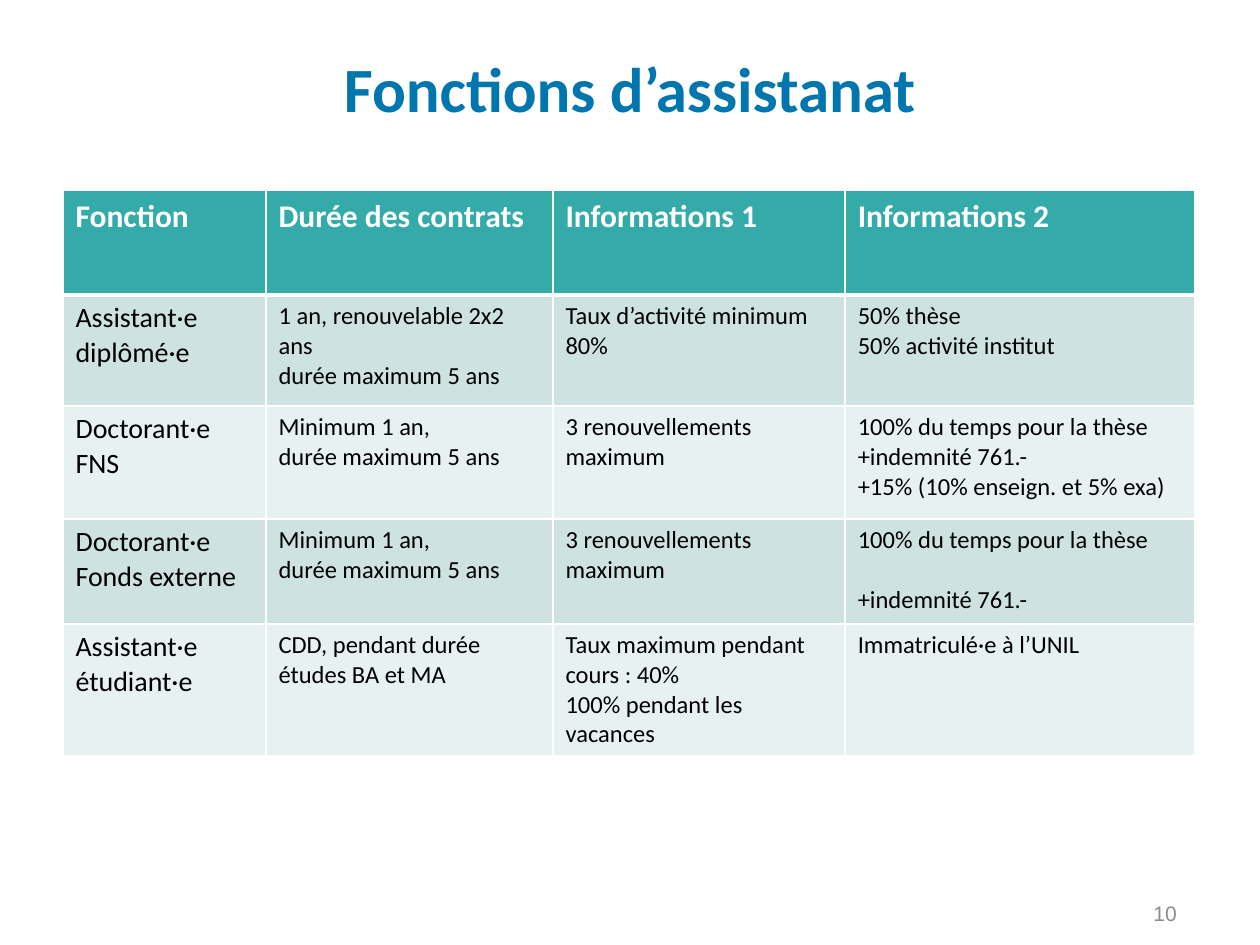
from dataclasses import dataclass

from lxml import etree
from pptx import Presentation
from pptx.dml.color import RGBColor
from pptx.enum import text
from pptx.oxml import ns
from pptx.util import Pt


@dataclass(frozen=True)
class Theme:
    font: str = "Calibri"
    number_font: str = "Arial"
    title: str = "0076AF"
    header: str = "34AAA9"
    bands: tuple = ("CEE2E2", "E8F1F1")
    light: str = "FFFFFF"
    dark: str = "000000"
    muted: str = "8C8C8C"
    title_size: int = 36
    header_size: int = 18
    function_size: int = 16
    detail_size: int = 14
    number_size: int = 12
    blank_line: int = 17


THEME = Theme()
COLUMN_WIDTHS = (116, 164, 167, 200)
ROW_HEIGHTS = (59.5, 63.5, 64.5, 60, 74.5)
HEADINGS = ("Fonction", "Durée des contrats", "Informations 1", "Informations 2")
CONTRACTS = (
    ("Assistant·e diplômé·e",
     "1 an, renouvelable 2x2 ans\ndurée maximum 5 ans",
     "Taux d’activité minimum 80%",
     "50% thèse\n50% activité institut"),
    ("Doctorant·e\nFNS",
     "Minimum 1 an,\ndurée maximum 5 ans",
     "3 renouvellements maximum",
     "100% du temps pour la thèse\n+indemnité 761.-\n+15% (10% enseign. et 5% exa)"),
    ("Doctorant·e\nFonds externe",
     "Minimum 1 an,\ndurée maximum 5 ans",
     "3 renouvellements maximum",
     "100% du temps pour la thèse\n+indemnité 761.-"),
    ("Assistant·e étudiant·e",
     "CDD, pendant durée études BA et MA",
     "Taux maximum pendant cours : 40%\n100% pendant les vacances",
     "Immatriculé·e à l’UNIL"),
)


def place(element, left, top, width, height):
    element.left, element.top = Pt(left), Pt(top)
    element.width, element.height = Pt(width), Pt(height)


def format_text(frame, size, color, bold=False, font=THEME.font, align=None):
    for paragraph in frame.paragraphs:
        paragraph.alignment = align
        for run in paragraph.runs:
            run.font.name = font
            run.font.size = Pt(size)
            run.font.bold = bold
            run.font.color.rgb = RGBColor.from_string(color)


def set_borders(cell, top, bottom):
    """Draw light cell borders; must run before the cell fill is set."""
    properties = cell._tc.get_or_add_tcPr()
    for side, width in (("L", 1), ("R", 1), ("T", top), ("B", bottom)):
        line = etree.SubElement(properties, ns.qn(f"a:ln{side}"), w=str(Pt(width)))
        fill = etree.SubElement(line, ns.qn("a:solidFill"))
        etree.SubElement(fill, ns.qn("a:srgbClr"), val=THEME.light)


def fill_cell(cell, content, row, column):
    cell.text_frame.text = content
    set_borders(cell, top=3 if row == 1 else 1, bottom=3 if row == 0 else 1)
    cell.fill.solid()
    if row == 0:
        background = THEME.header
        format_text(cell.text_frame, THEME.header_size, THEME.light, bold=True)
    else:
        background = THEME.bands[(row - 1) % 2]
        size = THEME.function_size if column == 0 else THEME.detail_size
        format_text(cell.text_frame, size, THEME.dark)
    cell.fill.fore_color.rgb = RGBColor.from_string(background)


def add_title(slide, wording):
    title = slide.shapes.title
    place(title, 36, 5, 648, 90)
    title.text_frame.text = wording
    title.text_frame.vertical_anchor = text.MSO_ANCHOR.MIDDLE
    format_text(title.text_frame, THEME.title_size, THEME.title, bold=True,
                align=text.PP_ALIGN.CENTER)


def add_contract_table(slide):
    rows = (HEADINGS,) + CONTRACTS
    table = slide.shapes.add_table(
        len(rows), len(HEADINGS), Pt(36), Pt(109),
        Pt(sum(COLUMN_WIDTHS)), Pt(sum(ROW_HEIGHTS))).table
    for column, width in zip(table.columns, COLUMN_WIDTHS):
        column.width = Pt(width)
    for row, height in zip(table.rows, ROW_HEIGHTS):
        row.height = Pt(height)
    for r, row in enumerate(rows):
        for c, content in enumerate(row):
            fill_cell(table.cell(r, c), content, r, c)
    external_allowance = table.cell(3, 3).text_frame.paragraphs[1]
    external_allowance.space_before = Pt(THEME.blank_line)


def add_page_number(slide, number):
    box = slide.shapes.add_textbox(Pt(592), Pt(507.5), Pt(91.5), Pt(29))
    frame = box.text_frame
    frame.word_wrap = True
    frame.margin_right = Pt(11)
    frame.vertical_anchor = text.MSO_ANCHOR.MIDDLE
    frame.text = number
    format_text(frame, THEME.number_size, THEME.muted, font=THEME.number_font,
                align=text.PP_ALIGN.RIGHT)


def main():
    presentation = Presentation()
    presentation.slide_width, presentation.slide_height = Pt(720), Pt(540)
    slide = presentation.slides.add_slide(presentation.slide_layouts[5])
    add_title(slide, "Fonctions d’assistanat")
    add_contract_table(slide)
    add_page_number(slide, "10")
    presentation.save("out.pptx")


if __name__ == "__main__":
    main()
